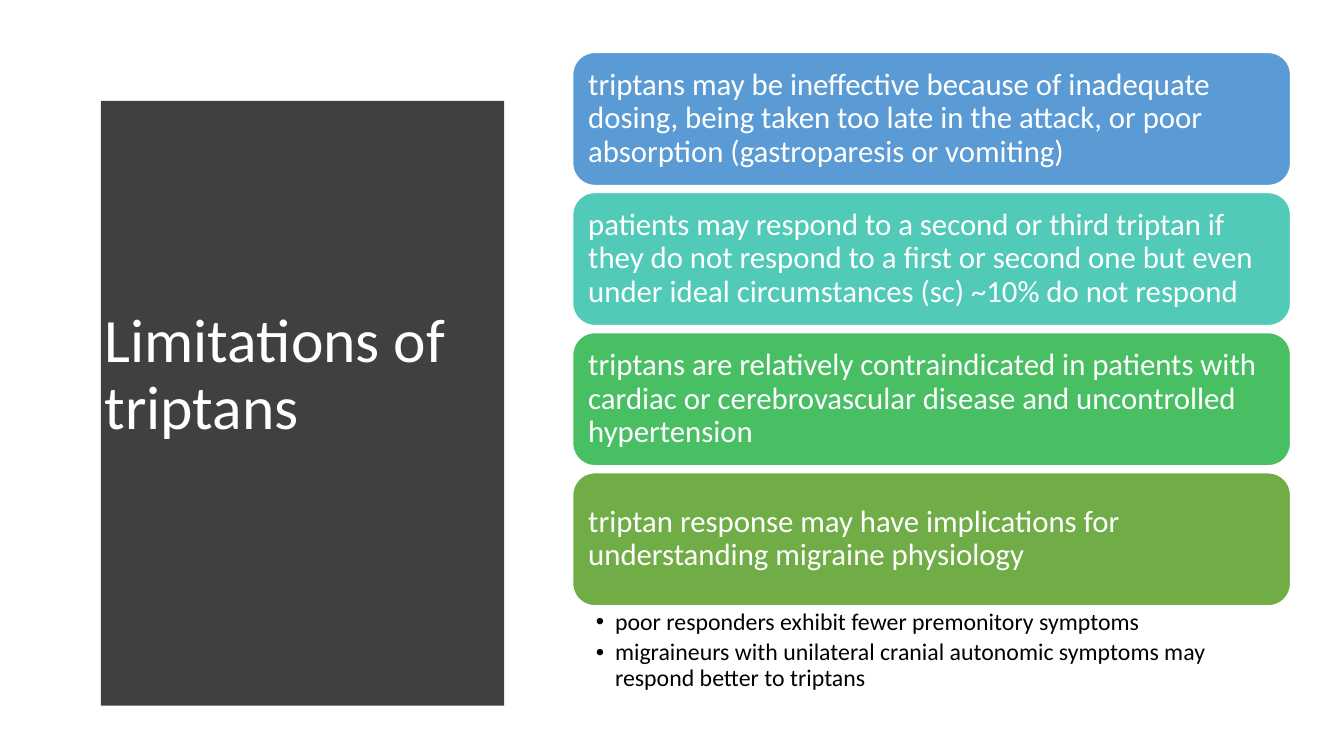
from lxml import etree
from pptx import Presentation
from pptx import util as u
from pptx.dml.color import RGBColor
from pptx.enum import shapes, text
from pptx.oxml.ns import qn

WHITE = RGBColor(0xFF, 0xFF, 0xFF)
BLACK = RGBColor(0, 0, 0)
CHARCOAL = RGBColor(0x40, 0x40, 0x40)
BLUE = RGBColor(0x5B, 0x9B, 0xD5)
TEAL = RGBColor(0x52, 0xCA, 0xB8)
GREEN = RGBColor(0x49, 0xBF, 0x64)
OLIVE = RGBColor(0x70, 0xAD, 0x47)

LIMITATIONS = [
    ("triptans may be ineffective because of inadequate dosing, being taken too late "
     "in the attack, or poor absorption (gastroparesis or vomiting)", BLUE),
    ("patients may respond to a second or third triptan if they do not respond to a first "
     "or second one but even under ideal circumstances (sc) ~10% do not respond", TEAL),
    ("triptans are relatively contraindicated in patients with cardiac or cerebrovascular "
     "disease and uncontrolled hypertension", GREEN),
    ("triptan response may have implications for understanding migraine physiology", OLIVE),
]
RESPONSE_NOTES = [
    "poor responders exhibit fewer premonitory symptoms",
    "migraineurs with unilateral cranial autonomic symptoms may respond better to triptans",
]
CARD_LEFT, CARD_TOP, CARD_WIDTH, CARD_HEIGHT = 5.68, 0.52, 7.12, 1.32
CARD_GAP = 0.07


class SlideBuilder:
    font = "Calibri"
    line_spacing = 0.9

    def __init__(self, slide):
        self.slide = slide

    def set_text(self, shape, lines, size, color, anchor, insets, bulleted=False):
        """Fill a shape with paragraphs; insets are left, top, right, bottom."""
        frame = shape.text_frame
        frame.text = "\n".join(lines)
        frame.word_wrap = True
        frame.auto_size = text.MSO_AUTO_SIZE.NONE
        frame.vertical_anchor = anchor
        (frame.margin_left, frame.margin_top,
         frame.margin_right, frame.margin_bottom) = map(u.Inches, insets)
        for paragraph in frame.paragraphs:
            paragraph.alignment = text.PP_ALIGN.LEFT
            paragraph.line_spacing = self.line_spacing
            if bulleted:
                paragraph.space_after = u.Pt(3.4)
                self.add_bullet(paragraph)
            for run in paragraph.runs:
                run.font.name = self.font
                run.font.size = u.Pt(size)
                run.font.color.rgb = color

    def add_bullet(self, paragraph):
        properties = paragraph._p.get_or_add_pPr()
        indent = u.Inches(0.19)
        properties.set("marL", str(indent))
        properties.set("indent", str(-indent))
        etree.SubElement(properties, qn("a:buFont")).set("typeface", "Arial")
        etree.SubElement(properties, qn("a:buChar")).set("char", "•")

    def text_box(self, box, lines, size, color, anchor, insets, bulleted=False):
        shape = self.slide.shapes.add_textbox(*map(u.Inches, box))
        self.set_text(shape, lines, size, color, anchor, insets, bulleted)

    def card(self, box, line, fill):
        card = self.slide.shapes.add_shape(
            shapes.MSO_SHAPE.ROUNDED_RECTANGLE, *map(u.Inches, box))
        card.shadow.inherit = False
        card.fill.solid()
        card.fill.fore_color.rgb = fill
        card.line.color.rgb = WHITE
        card.line.width = u.Pt(1)
        self.set_text(card, [line], 22, WHITE, text.MSO_ANCHOR.MIDDLE, [0.09] * 4)

    def curved_panel(self, left, top, right, bottom, bulge, fill, steps=40):
        """Draw a panel whose right side bows outward as a parabola."""
        curve = []
        for step in range(steps + 1):
            across = 2 * step / steps - 1
            curve.append((right + bulge * (1 - across ** 2),
                          top + (bottom - top) * step / steps))
        outline = self.slide.shapes.build_freeform(left, top, scale=u.Inches(1))
        outline.add_line_segments(curve + [(left, bottom)], close=True)
        panel = outline.convert_to_shape()
        panel.shadow.inherit = False
        panel.fill.solid()
        panel.fill.fore_color.rgb = fill
        panel.line.fill.background()


def main():
    deck = Presentation()
    deck.slide_width, deck.slide_height = u.Inches(13.33), u.Inches(7.5)
    builder = SlideBuilder(deck.slides.add_slide(deck.slide_layouts[6]))

    builder.curved_panel(0.53, 0.52, 5.08, 6.96, 0.24, CHARCOAL)
    builder.text_box((0.94, 1.11, 3.74, 5.24), ["Limitations of triptans"], 44, WHITE,
                     text.MSO_ANCHOR.MIDDLE, (0.1, 0.05, 0.1, 0.05))
    for row, (limitation, fill) in enumerate(LIMITATIONS):
        card_top = CARD_TOP + row * (CARD_HEIGHT + CARD_GAP)
        builder.card((CARD_LEFT, card_top, CARD_WIDTH, CARD_HEIGHT), limitation, fill)
    builder.text_box((CARD_LEFT, 6.02, CARD_WIDTH, 0.92), RESPONSE_NOTES, 17, BLACK,
                     text.MSO_ANCHOR.TOP, (0.23, 0.03, 0.17, 0.03), bulleted=True)
    deck.save("out.pptx")


if __name__ == "__main__":
    main()
